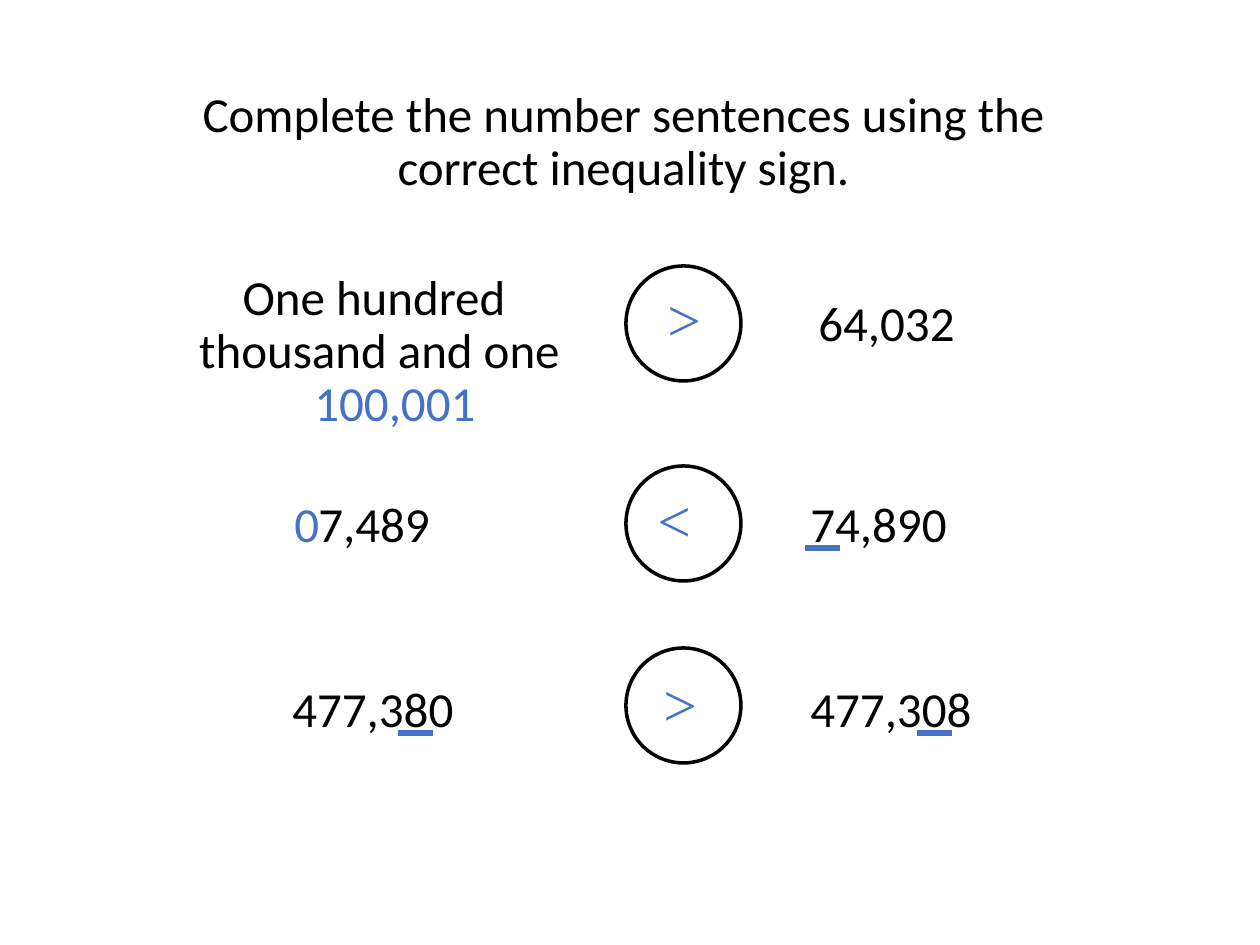
from lxml import etree
from pptx import Presentation
from pptx.dml.color import RGBColor
from pptx.enum.shapes import MSO_CONNECTOR, MSO_SHAPE
from pptx.enum.text import PP_ALIGN
from pptx.oxml.ns import qn
from pptx.util import Pt

EMU_PER_PX = 914400 / 126
LEFT, CENTER = PP_ALIGN.LEFT, PP_ALIGN.CENTER
ELLIPSE, STRAIGHT = MSO_SHAPE.OVAL, MSO_CONNECTOR.STRAIGHT
COLORS = {"question": "000000", "answer": "4472C4"}
CIRCLE_SIZE = 115
NUMBER_SIZE = (230, 97)


def px(length):
    """Turn pixels into EMU."""
    return round(length * EMU_PER_PX)


def color(role):
    """Return the colour of a role."""
    return RGBColor.from_string(COLORS[role])


def add_text(slide, box, *lines, role="question", size=28, font="Calibri", align=LEFT):
    """Write lines of text in a box, one paragraph each."""
    frame = slide.shapes.add_textbox(*map(px, box)).text_frame
    frame.word_wrap = True
    frame.text = "\n".join(lines)
    for paragraph in frame.paragraphs:
        paragraph.alignment = align
        paragraph.line_spacing = 0.9
        paragraph.font.size = Pt(size)
        paragraph.font.name = font
        paragraph.font.color.rgb = color(role)


def add_circle(slide, left, top):
    """Draw the empty circle that holds a sign."""
    circle = slide.shapes.add_shape(ELLIPSE, *map(px, (left, top, CIRCLE_SIZE, CIRCLE_SIZE)))
    circle.shadow.inherit = False
    circle.fill.background()
    circle.line.color.rgb = color("question")
    circle.line.width = Pt(2)


def add_underline(slide, left, top, width=35):
    """Underline the digit that decides the comparison."""
    underline = slide.shapes.add_connector(STRAIGHT, px(left), px(top), px(left + width), px(top))
    underline.line.color.rgb = color("answer")
    underline.line.width = Pt(3)
    etree.SubElement(underline._element.spPr, qn("a:effectLst"))


def add_comparison(slide, box, sign, sign_at, numbers, underlines=()):
    """Place numbers, circle, sign and underlines relative to a row's box."""
    left, top = box
    for text, x, y in numbers:
        add_text(slide, (left + x, top + y, *NUMBER_SIZE), text)
    add_circle(slide, left + 346, top)
    sign_x, sign_y = sign_at
    add_text(slide, (left + sign_x, top + sign_y, 246, 97), sign,
             role="answer", size=34, font="Times New Roman")
    for x, y in underlines:
        add_underline(slide, left + x, top + y)


def add_title(slide, box):
    """Write the task."""
    add_text(slide, box, "Complete the number sentences using the correct inequality sign.",
             align=CENTER)


def add_worded_number(slide, box):
    """Write the number in words with its digits below."""
    left, top, width, height = box
    add_text(slide, box, "One hundred ", "thousand and one", align=CENTER)
    add_text(slide, (left + 213, top + 106, 246, height), "100,001", role="answer")


def main():
    """Build the slide."""
    deck = Presentation()
    deck.slide_width, deck.slide_height = px(1260), px(945)
    slide = deck.slides.add_slide(deck.slide_layouts[6])
    add_title(slide, (165, 84, 917, 97))
    add_worded_number(slide, (89, 267, 581, 97))
    add_comparison(slide, (280, 266), ">", (375, 18), [("64,032", 526, 27)])
    add_comparison(slide, (280, 466), "<", (365, 19),
                   [("7,489", 26, 28), ("74,890", 518, 28)], [(525, 82)])
    add_text(slide, (282, 494, 88, 97), "0", role="answer")
    add_comparison(slide, (280, 648), ">", (371, 21),
                   [("477,380", 0, 31), ("477,308", 518, 31)], [(118, 85), (637, 85)])
    deck.save("out.pptx")


if __name__ == "__main__":
    main()
